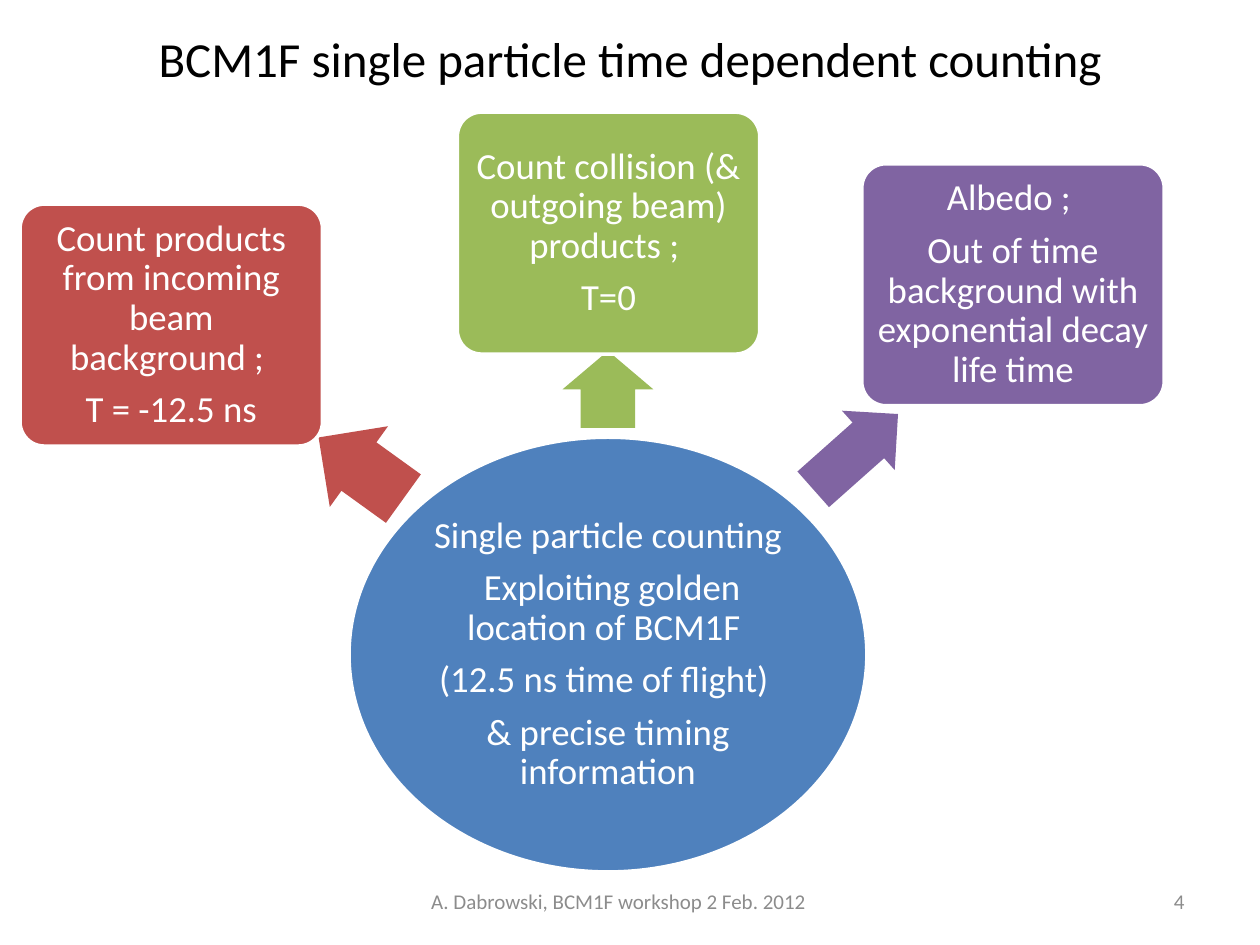
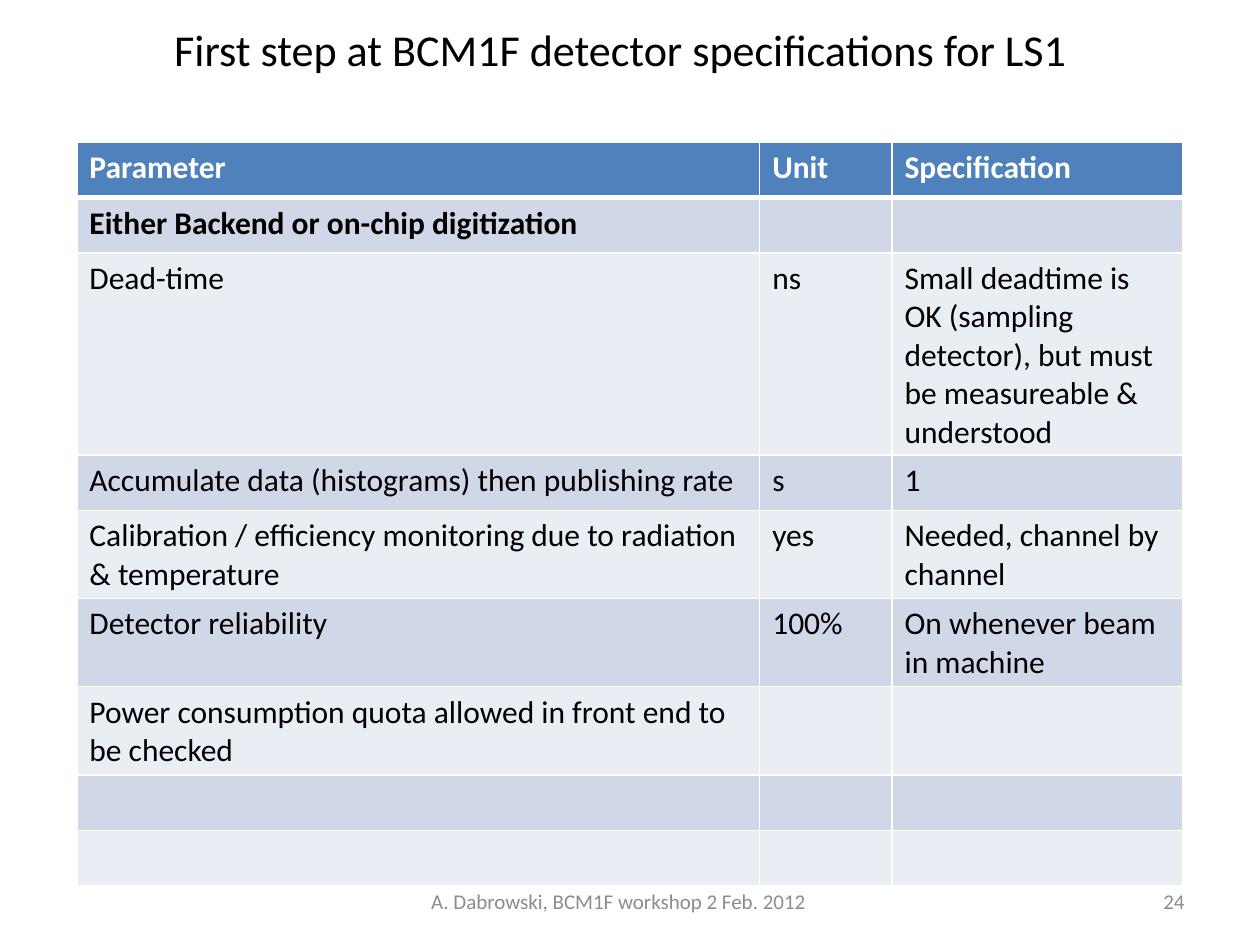
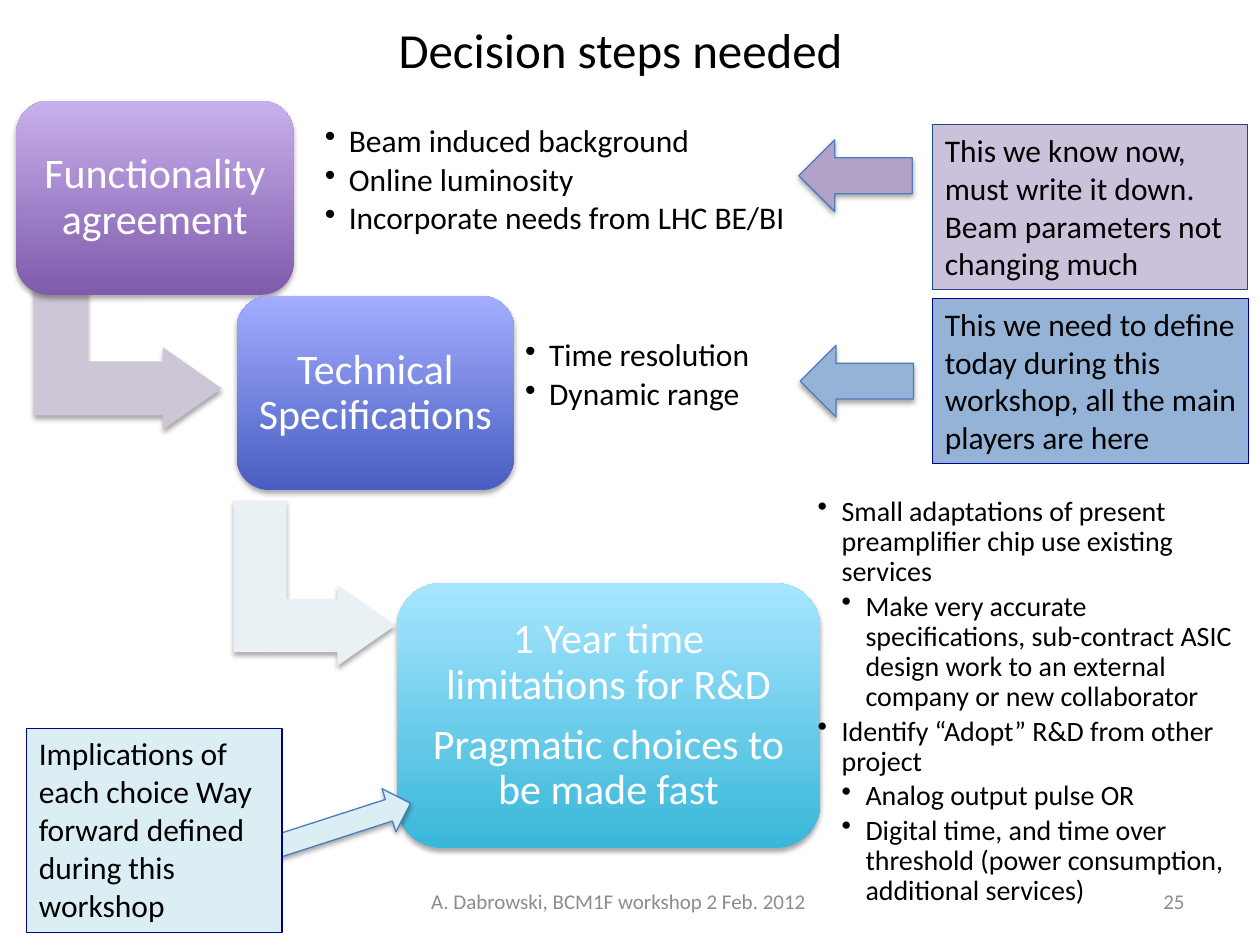
from dataclasses import dataclass

from lxml.etree import SubElement
from pptx import Presentation
from pptx.dml.color import RGBColor
from pptx.enum.shapes import MSO_SHAPE as Shape
from pptx.enum.text import MSO_ANCHOR as Anchor, MSO_AUTO_SIZE as AutoSize, PP_ALIGN as Align
from pptx.oxml.ns import qn
from pptx.util import Inches, Pt


@dataclass(frozen=True)
class Theme:
    """Colours, type sizes and effects shared by the slides."""
    font: str = "Calibri"
    black: str = "000000"
    white: str = "FFFFFF"
    grey: str = "8C8C8C"
    blue: str = "4F81BD"
    red: str = "C0504D"
    green: str = "9BBB59"
    purple: str = "8064A2"
    navy: str = "000090"
    slate: str = "1F497D"
    arrow_edge: str = "4B7EBC"
    lilac: str = "CCC1DA"
    mauve: str = "B3A2C7"
    sky: str = "95B3D7"
    ice: str = "DBEEF4"
    purple_bend: str = "CDC6D7"
    pale_bend: str = "E9F1F5"
    purple_fade: tuple = ("7F5BAB", "C8B0ED")
    blue_fade: tuple = ("495EC2", "A2ADFF")
    cyan_fade: tuple = ("39B7D8", "A7E6FF")
    bands: tuple = ("D0D8E8", "E9EDF4")
    title: float = 28
    long_title: float = 25.2
    step: float = 24
    cause: float = 21
    body: float = 18
    small: float = 16
    footer: float = 12


THEME = Theme()
UNITS_PER_INCH = 10
FOOTER = "A. Dabrowski, BCM1F workshop 2 Feb. 2012"


def grid(units):
    """Turn grid columns or rows into a length."""
    return Inches(units / UNITS_PER_INCH)


def add_bullet(paragraph, depth):
    """Give a paragraph a hanging bullet at the given depth."""
    paragraph.level = depth
    properties = paragraph._p.get_or_add_pPr()
    properties.set("marL", str(grid(1.9 * depth)))
    properties.set("indent", str(-grid(1.9)))
    SubElement(properties, qn("a:buChar")).set("char", "•")


def write_text(frame, paragraphs, *, size=THEME.body, color=THEME.black, bold=False,
               align=Align.LEFT, anchor=Anchor.TOP, margin=None, spacing=None, after=0,
               grow=False):
    """Fill a frame with strings or (depth, string) bullets in one format."""
    frame.word_wrap = True
    frame.vertical_anchor = anchor
    if grow:
        frame.auto_size = AutoSize.SHAPE_TO_FIT_TEXT
    if margin is not None:
        frame.margin_left = frame.margin_right = grid(margin)
        frame.margin_top = frame.margin_bottom = grid(margin)
    for index, content in enumerate(paragraphs):
        depth, words = content if isinstance(content, tuple) else (0, content)
        paragraph = frame.add_paragraph() if index else frame.paragraphs[0]
        paragraph.alignment = align
        if spacing:
            paragraph.line_spacing = spacing
            paragraph.space_after = Pt(after * size)
        if depth:
            add_bullet(paragraph, depth)
        run = paragraph.add_run()
        run.text = words
        run.font.name, run.font.size, run.font.bold = THEME.font, Pt(size), bold
        run.font.color.rgb = RGBColor.from_string(color)


class Deck:
    """Presentation style together with the slide being built."""

    def __init__(self):
        """Open an empty deck on a grid of 100 columns and 75 rows."""
        self.file = Presentation()
        self.file.slide_width, self.file.slide_height = grid(100), grid(75)
        self.slide = None

    def new_slide(self, title, number, box=(12.6, 0, 73.3, 7.8), size=THEME.title):
        """Start a slide with its title and footer."""
        self.slide = self.file.slides.add_slide(self.file.slide_layouts[6])
        self.text(box, [title], size=size, align=Align.CENTER, anchor=Anchor.MIDDLE)
        for place, words, align in (((31.8, 69.5, 34.6, 4), FOOTER, Align.CENTER),
                                    ((71.7, 69.5, 23.3, 4), number, Align.RIGHT)):
            self.text(place, [words], size=THEME.footer, color=THEME.grey,
                      align=align, anchor=Anchor.MIDDLE)

    def text(self, box, paragraphs, **style):
        """Place a text box."""
        frame = self.slide.shapes.add_textbox(*map(grid, box)).text_frame
        write_text(frame, paragraphs, **style)

    def bullets(self, box, items, size=THEME.body, margin=1):
        """Place a bullet list beside a step."""
        self.text(box, items, size=size, anchor=Anchor.MIDDLE, margin=margin,
                  spacing=0.9, after=0.15)

    def shape(self, kind, box, fill, line=None, adjust=(), turn=0, shadow=False):
        """Draw a preset shape with a plain or two-colour fill."""
        shape = self.slide.shapes.add_shape(kind, *map(grid, box))
        shape.rotation = turn
        for index, value in enumerate(adjust):
            shape.adjustments[index] = value
        if isinstance(fill, tuple):
            shape.fill.gradient()
            shape.fill.gradient_angle = 90
            for stop, color in zip(shape.fill.gradient_stops, fill):
                stop.color.rgb = RGBColor.from_string(color)
        else:
            shape.fill.solid()
            shape.fill.fore_color.rgb = RGBColor.from_string(fill)
        if line:
            color, width = line
            shape.line.color.rgb = RGBColor.from_string(color)
            shape.line.width = Pt(width)
        else:
            shape.line.fill.background()
        shape.shadow.inherit = False
        if shadow:
            self.cast_shadow(shape)
        return shape

    def cast_shadow(self, shape):
        """Drop a soft shadow below a shape."""
        effects = shape._element.spPr.find(qn("a:effectLst"))
        outer = SubElement(effects, qn("a:outerShdw"), blurRad=str(Pt(3.1)),
                           dist=str(Pt(1.8)), dir="5400000", rotWithShape="0")
        tone = SubElement(outer, qn("a:srgbClr"), val=THEME.black)
        SubElement(tone, qn("a:alpha"), val="35000")

    def bubble(self, kind, box, fill, paragraphs, size, margin, **look):
        """Draw a shape with centred white text."""
        shape = self.shape(kind, box, fill, **look)
        write_text(shape.text_frame, paragraphs, size=size, color=THEME.white,
                   align=Align.CENTER, anchor=Anchor.MIDDLE, margin=margin,
                   spacing=0.9, after=0.35)

    def cause(self, kind, box, fill, paragraphs, margin=0.4, adjust=(0.1,)):
        """Draw a white-edged part of the counting diagram."""
        self.bubble(kind, box, fill, paragraphs, THEME.cause, margin,
                    line=(THEME.white, 2), adjust=adjust)

    def step(self, box, fill, paragraphs):
        """Draw a decision step."""
        self.bubble(Shape.ROUNDED_RECTANGLE, box, fill, paragraphs, THEME.step, 1,
                    adjust=(0.167,), shadow=True)

    def bend(self, box, fill):
        """Draw the bent arrow leading to the next step."""
        self.shape(Shape.BENT_UP_ARROW, box, fill, adjust=(0.328, 0.25, 0.358),
                   turn=90, shadow=True)

    def pointer(self, kind, box, fill, turn=0):
        """Draw an outlined arrow."""
        self.shape(kind, box, fill, line=(THEME.arrow_edge, 0.75), turn=turn, shadow=True)

    def remark(self, box, fill, words, edge=THEME.navy):
        """Draw an outlined remark that fits its text."""
        shape = self.shape(Shape.RECTANGLE, box, fill, line=(edge, 0.75))
        write_text(shape.text_frame, [words], grow=True)

    def cell(self, cell, words, fill, edges, **style):
        """Fill one table cell and rule its left, right, top and bottom edges."""
        properties = cell._tc.get_or_add_tcPr()
        for side, width in zip("LRTB", edges):
            edge = SubElement(properties, qn(f"a:ln{side}"), w=str(Pt(width)))
            SubElement(SubElement(edge, qn("a:solidFill")), qn("a:srgbClr"), val=THEME.white)
        cell.fill.solid()
        cell.fill.fore_color.rgb = RGBColor.from_string(fill)
        if words:
            write_text(cell.text_frame, [words], **style)

    def table(self, left, top, widths, row_height, rows):
        """Place a banded table whose header has a heavy lower rule."""
        size = (sum(widths), row_height * len(rows))
        table = self.slide.shapes.add_table(
            len(rows), len(widths), *map(grid, (left, top, *size))).table
        for column, width in zip(table.columns, widths):
            column.width = grid(width)
        for r, row in enumerate(rows):
            header = r == 0
            fill = THEME.blue if header else THEME.bands[(r - 1) % 2]
            edges = (1, 1, 3 if r == 1 else 1, 3 if header else 1)
            for c, words in enumerate(row):
                self.cell(table.cell(r, c), words, fill, edges, bold=r < 2,
                          color=THEME.white if header else THEME.black)


def counting_slide(deck):
    """Show what single particle counting separates."""
    deck.new_slide("BCM1F single particle time dependent counting", "4", box=(5, 1.4, 90, 6.4))
    deck.cause(Shape.OVAL, (27.7, 34.7, 41.1, 34.5), THEME.blue,
               ["Single particle counting", " Exploiting golden location of BCM1F ",
                "(12.5 ns time of flight) ", "& precise timing information"],
               margin=0.1, adjust=())
    causes = (
        (THEME.red, (24.5, 33.2, 8.3, 7.9), 35.8, (1.6, 16.2),
         ["Count products from incoming beam background ; ", "T = -12.5 ns"]),
        (THEME.green, (45.2, 27.3, 6.1, 7.2), 90, (36.3, 8.9),
         ["Count collision (& outgoing beam) products ; ", "T=0"]),
        (THEME.purple, (63.4, 32.7, 9, 6.3), 138.4, (68.4, 13),
         ["Albedo ; ", "Out of time background with exponential decay life time"]),
    )
    for color, arrow, turn, corner, paragraphs in causes:
        deck.shape(Shape.LEFT_ARROW, arrow, color, adjust=(0.6, 0.5), turn=turn)
        deck.cause(Shape.ROUNDED_RECTANGLE, (*corner, 24, 19.2), color, paragraphs)


def specification_slide(deck):
    """List the detector specifications."""
    deck.new_slide("First step at BCM1F detector specifications for LS1", "24",
                   size=THEME.long_title)
    blank = ("", "", "")
    deck.table(6.1, 11.3, (54.2, 10.5, 23.1), 4.4, [
        ("Parameter", "Unit", "Specification"),
        ("Either Backend or on-chip digitization", "", ""),
        ("Dead-time", "ns", "Small deadtime is OK (sampling detector), "
                            "but must be measureable & understood"),
        ("Accumulate data (histograms) then publishing rate", "s", "1"),
        ("Calibration / efficiency monitoring due to radiation & temperature", "yes",
         "Needed, channel by channel"),
        ("Detector reliability", "100%", "On whenever beam in machine"),
        ("Power consumption quota allowed in front end to be checked", "", ""),
        blank, blank,
    ])


def decision_slide(deck):
    """Show the chain of decisions with remarks."""
    deck.new_slide("Decision steps needed", "25")
    deck.bend((3.6, 20.1, 13.1, 14.9), THEME.purple_bend)
    deck.step((1.3, 8, 22, 15.4), THEME.purple_fade, ["Functionality agreement"])
    deck.bullets((24.8, 8.1, 39.8, 12.5), [
        (1, "Beam induced background"), (1, "Online luminosity"),
        (1, "Incorporate needs from LHC BE/BI")])
    deck.bend((18.4, 39.9, 13.1, 12.8), THEME.pale_bend)
    deck.step((18.8, 23.5, 22, 15.4), THEME.blue_fade, ["Technical Specifications"])
    deck.bullets((40.7, 23.6, 25, 12.5), [(1, "Time resolution"), (1, "Dynamic range")])
    deck.step((31.5, 46.3, 33.6, 21), THEME.cyan_fade,
              ["1 Year time limitations for R&D", "Pragmatic choices to be made fast"])
    deck.bullets((64, 38.2, 34.7, 35), [
        (1, "Small adaptations of present preamplifier chip use existing services"),
        (2, "Make very accurate specifications, sub-contract ASIC design work to an "
            "external company or new collaborator"),
        (1, "Identify “Adopt” R&D from other project"),
        (2, "Analog output pulse OR"),
        (2, "Digital time, and time over threshold (power consumption, additional services)"),
    ], size=THEME.small, margin=0.9)
    deck.pointer(Shape.LEFT_ARROW, (63.4, 11.1, 9, 5.7), THEME.mauve)
    deck.remark((74, 9.9, 25, 13.1), THEME.lilac,
                "This we know now, must write it down. Beam parameters not changing much",
                edge=THEME.slate)
    deck.remark((74, 23.7, 25.1, 13.1), THEME.sky,
                "This we need to define today during this workshop, "
                "all the main players are here")
    deck.pointer(Shape.LEFT_ARROW, (63.5, 27.4, 9, 5.7), THEME.sky)
    deck.pointer(Shape.RIGHT_ARROW, (15.8, 64.6, 17.2, 3.6), THEME.ice, turn=342.1)
    deck.remark((2.1, 57.8, 20.3, 16.2), THEME.ice,
                "Implications of each choice Way forward defined during this workshop")


def main():
    """Build and save the slides."""
    deck = Deck()
    for build in (counting_slide, specification_slide, decision_slide):
        build(deck)
    deck.file.save("out.pptx")


if __name__ == "__main__":
    main()
